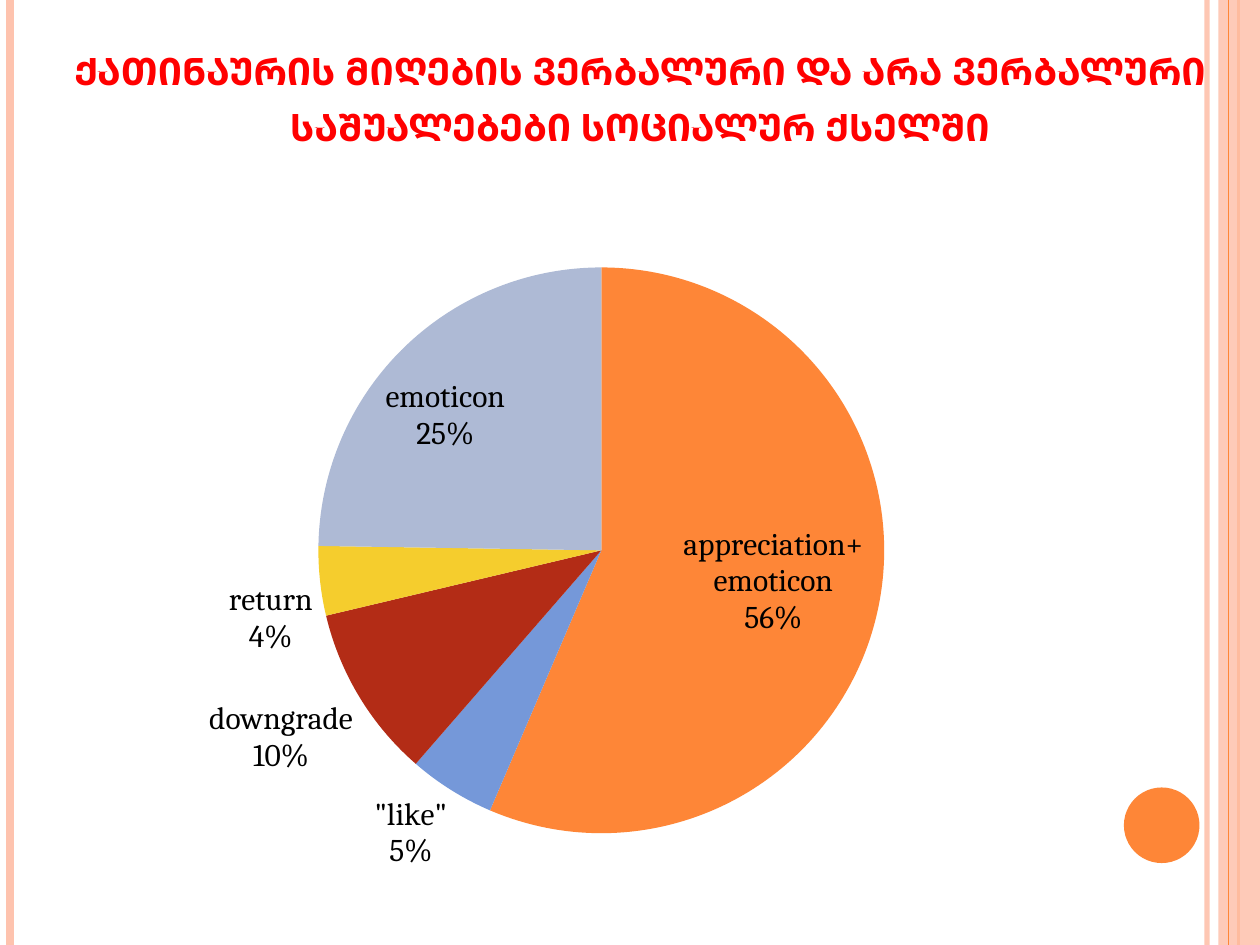
from lxml.etree import SubElement
from pptx import Presentation
from pptx.chart.data import CategoryChartData
from pptx.dml.color import RGBColor
from pptx.enum.chart import XL_CHART_TYPE, XL_LABEL_POSITION
from pptx.enum.shapes import MSO_CONNECTOR, MSO_SHAPE
from pptx.enum.text import MSO_ANCHOR, PP_ALIGN
from pptx.oxml import parse_xml
from pptx.oxml.ns import nsdecls, qn
from pptx.util import Inches, Pt

ORANGE = RGBColor(0xFE, 0x86, 0x37)
PEACH = RGBColor(0xFE, 0xC3, 0xAE)
BLUE = RGBColor(0x75, 0x98, 0xD9)
BRICK = RGBColor(0xB3, 0x2C, 0x16)
YELLOW = RGBColor(0xF5, 0xCD, 0x2D)
LAVENDER = RGBColor(0xAE, 0xBA, 0xD5)
RED = RGBColor(0xFF, 0, 0)
BLACK = RGBColor(0, 0, 0)

TITLE = "ქათინაურის მიღების ვერბალური და არა ვერბალური საშუალებები სოციალურ ქსელში"

# Category, percent, slice colour
RESPONSES = [
    ("appreciation+ emoticon", 57, ORANGE),
    ('"like"', 5, BLUE),
    ("downgrade", 10, BRICK),
    ("return", 4, YELLOW),
    ("emoticon", 25, LAVENDER),
]

# Vertical stripes: x, colour, width in points, opacity in percent
STRIPES_BEHIND = [(9.58, PEACH, 3, 93), (0.08, PEACH, 4.5, 100), (9.83, ORANGE, 1.5, 100)]
STRIPES_FRONT = [(9.75, ORANGE, 0.75, 100)]

CHART_BOX = (0, 1.7, 9.83, 5.49)
PIE_CENTRE, PIE_SIZE = (4.77, 4.37), 4.49

prs = Presentation()
prs.slide_width, prs.slide_height = Inches(10), Inches(7.5)
slide = prs.slides.add_slide(prs.slide_layouts[6])


def set_opacity(part, percent):
    for colour in part.iter(qn("a:srgbClr")):
        SubElement(colour, qn("a:alpha"), val=str(percent * 1000))


def add_stripe(x, colour, width, opacity):
    stripe = slide.shapes.add_connector(
        MSO_CONNECTOR.STRAIGHT, Inches(x), 0, Inches(x), prs.slide_height)
    stripe.line.color.rgb = colour
    stripe.line.width = Pt(width)
    properties = stripe._element.spPr
    if opacity < 100:
        set_opacity(properties, opacity)
    SubElement(properties, qn("a:effectLst"))


def add_filled(kind, box, colour):
    filled = slide.shapes.add_shape(kind, *map(Inches, box))
    filled.shadow.inherit = False
    filled.fill.solid()
    filled.fill.fore_color.rgb = colour
    filled.line.fill.background()
    return filled


# Side decoration
for stripe in STRIPES_BEHIND:
    add_stripe(*stripe)
band = add_filled(MSO_SHAPE.RECTANGLE, (9.67, 0, 0.33, 7.5), PEACH)
set_opacity(band._element.spPr, 87)
for stripe in STRIPES_FRONT:
    add_stripe(*stripe)
add_filled(MSO_SHAPE.OVAL, (8.92, 6.25, 0.6, 0.6), ORANGE)

# Title
title = slide.shapes.add_textbox(*map(Inches, (0.33, 0.31, 9.5, 0.94))).text_frame
title.word_wrap = True
title.vertical_anchor = MSO_ANCHOR.BOTTOM
title.text = TITLE
heading = title.paragraphs[0]
heading.alignment = PP_ALIGN.CENTER
heading_run = heading.runs[0]
heading_run.font.name = "Times New Roman"
heading_run.font.size = Pt(27)
heading_run.font.bold = True
heading_run.font.color.rgb = RED
heading_run._r.get_or_add_rPr().set("cap", "small")

# Pie chart
data = CategoryChartData()
data.categories = [category for category, _, _ in RESPONSES]
data.add_series("Series 1", [percent for _, percent, _ in RESPONSES])
chart = slide.shapes.add_chart(
    XL_CHART_TYPE.PIE, *map(Inches, CHART_BOX), data).chart
chart.has_legend = False
chart.has_title = False
chart.font.name = "Cambria"
chart.font.size = Pt(18)
chart.font.color.rgb = BLACK

pie = chart.plots[0]
pie.vary_by_categories = True
for index, (_, _, colour) in enumerate(RESPONSES):
    fill = pie.series[0].points[index].format.fill
    fill.solid()
    fill.fore_color.rgb = colour

# Labels: category above percent
pie.has_data_labels = True
labels = pie.data_labels
labels.show_value = False
labels.show_category_name = True
labels.show_percentage = True
labels.position = XL_LABEL_POSITION.BEST_FIT
separator = parse_xml(f"<c:separator {nsdecls('c')}>\n</c:separator>")
labels._element.find(qn("c:showBubbleSize")).addnext(separator) if (
    labels._element.find(qn("c:showBubbleSize")) is not None
) else labels._element.find(qn("c:showPercent")).addnext(separator)

# Pie position as fractions of the chart box
left, top, width, height = CHART_BOX
fractions = {
    "x": (PIE_CENTRE[0] - PIE_SIZE / 2 - left) / width,
    "y": (PIE_CENTRE[1] - PIE_SIZE / 2 - top) / height,
    "w": PIE_SIZE / width,
    "h": PIE_SIZE / height,
}
plot_area = chart._chartSpace.chart.plotArea
for old_layout in plot_area.findall(qn("c:layout")):
    plot_area.remove(old_layout)
modes = '<c:layoutTarget val="inner"/><c:xMode val="edge"/><c:yMode val="edge"/>'
sizes = "".join(f'<c:{key} val="{value:.3f}"/>' for key, value in fractions.items())
plot_area.insert(0, parse_xml(
    f"<c:layout {nsdecls('c')}><c:manualLayout>{modes}{sizes}</c:manualLayout></c:layout>"))

prs.save("out.pptx")
